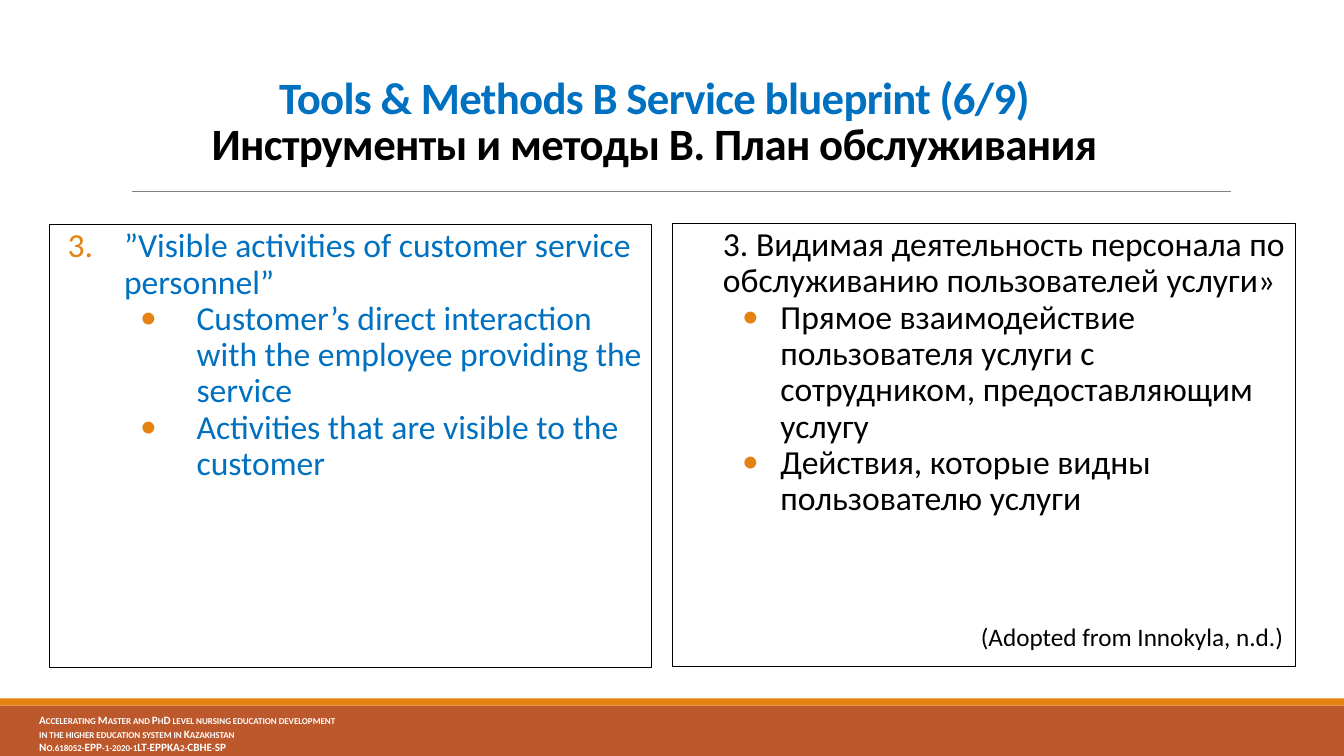
from pptx import Presentation
from pptx.util import Inches, Pt
from pptx.dml.color import RGBColor
from pptx.enum.shapes import MSO_SHAPE, MSO_CONNECTOR
from pptx.enum.text import PP_ALIGN, MSO_ANCHOR, MSO_AUTO_SIZE
from pptx.oxml.ns import qn
from lxml.etree import SubElement

TITLE = [
    ("Tools & Methods B Service blueprint (6/9)", "blue"),
    ("Инструменты и методы B. План обслуживания", "black"),
]
# kind, left margin, first-line indent, text
PANELS = [
    ((0.49, 2.22, 5.97, 4.4), "blue", [
        ("num", 0.74, -0.56, "”Visible activities of customer service personnel”"),
        ("dot", 1.46, -0.56, "Customer’s direct interaction with the employee providing the service"),
        ("dot", 1.46, -0.56, "Activities that are visible to the customer"),
    ]),
    ((6.67, 2.21, 6.18, 4.4), "black", [
        ("", 0.5, 0, "3. Видимая деятельность персонала по обслуживанию пользователей услуги»"),
        ("dot", 1.07, -0.38, "Прямое взаимодействие пользователя услуги с сотрудником, предоставляющим услугу"),
        ("dot", 1.07, -0.38, "Действия, которые видны пользователю услуги"),
    ]),
]
CREDIT = "(Adopted from Innokyla, n.d.)"
FOOTER = [
    "Accelerating Master and PhD level nursing education development",
    "in the higher education system in Kazakhstan",
    "No.618052-EPP-1-2020-1LT-EPPKA2-CBHE-SP",
]
BANDS = [((0, 7, 13.33, 0.5), "rust"), ((0, 6.93, 13.33, 0.07), "orange")]
THEME = {
    "font": "Calibri",
    "color": {"blue": "0070C0", "black": "000000", "white": "FFFFFF",
              "rust": "BD582C", "orange": "E48312", "gray": "808080"},
    "size": {"title": 32, "body": 24, "credit": 18, "footer": 8},
}
BULLETS = {
    "num": ("a:buAutoNum", {"type": "arabicPeriod", "startAt": "3"}),
    "dot": ("a:buChar", {"char": "•"}),
}


def tint(name):
    return RGBColor.from_string(THEME["color"][name])


def put(obj, form):
    for key, val in form.items():
        setattr(obj, key, val)


def write(para, text, role, color, bold=False, **extra):
    run = para.add_run()
    run.text = text
    put(run.font, {"name": THEME["font"], "size": Pt(THEME["size"][role]), "bold": bold})
    run.font.color.rgb = tint(color)
    for key, val in extra.items():
        run.font._element.set(key, val)


def lines(frame, count):
    return [frame.paragraphs[0]] + [frame.add_paragraph() for _ in range(count - 1)]


def box(area, **form):
    shape = slide.shapes.add_textbox(*map(Inches, area))
    put(shape.text_frame, {"word_wrap": True, **form})
    return shape


def mark(para, kind, left, hang):
    props = para._p.get_or_add_pPr()
    props.set("marL", str(Inches(left)))
    props.set("indent", str(Inches(hang)))
    if kind:
        tone = SubElement(props, qn("a:buClr"))
        SubElement(tone, qn("a:srgbClr"), val=THEME["color"]["orange"])
        SubElement(props, qn("a:buFont"), typeface=THEME["font"])
        tag, attrs = BULLETS[kind]
        SubElement(props, qn(tag), attrs)


deck = Presentation()
put(deck, {"slide_width": Inches(13.33), "slide_height": Inches(7.5)})
slide = deck.slides.add_slide(deck.slide_layouts[5])

for area, color in BANDS:
    band = slide.shapes.add_shape(MSO_SHAPE.RECTANGLE, *map(Inches, area))
    band.shadow.inherit = False
    band.fill.solid()
    band.fill.fore_color.rgb = tint(color)
    band.line.fill.background()

rule = slide.shapes.add_connector(MSO_CONNECTOR.STRAIGHT, *map(Inches, (1.31, 1.9, 12.21, 1.9)))
rule.line.color.rgb = tint("gray")
rule.line.width = Pt(0.5)
SubElement(rule._element.spPr, qn("a:effectLst"))

foot = box((0.29, 7.08, 4.59, 0.41), margin_top=0, margin_bottom=0)
for para, text in zip(lines(foot.text_frame, len(FOOTER)), FOOTER):
    write(para, text, "footer", "white", True, cap="small")

title = slide.shapes.title
put(title, dict(zip(("left", "top", "width", "height"), map(Inches, (0.33, 0.58, 12.32, 1.15)))))
put(title.text_frame, {"word_wrap": True, "vertical_anchor": MSO_ANCHOR.BOTTOM,
                       "auto_size": MSO_AUTO_SIZE.NONE})
head = title.text_frame.paragraphs[0]
put(head, {"alignment": PP_ALIGN.CENTER, "line_spacing": 0.85, "space_before": Pt(0)})
for spot, (text, color) in enumerate(TITLE):
    if spot:
        head.add_line_break()
    write(head, text, "title", color, True, spc="-50")

for area, color, items in PANELS:
    panel = box(area, margin_left=0, margin_right=0)
    panel.line.color.rgb = tint("black")
    panel.line.width = Pt(0.25)
    for para, (kind, left, hang, text) in zip(lines(panel.text_frame, len(items)), items):
        mark(para, kind, left, hang)
        para.line_spacing = 0.9
        write(para, text, "body", color)

credit = box((9.63, 6.11, 3.21, 0.41))
write(credit.text_frame.paragraphs[0], CREDIT, "credit", "black")

deck.save("out.pptx")
